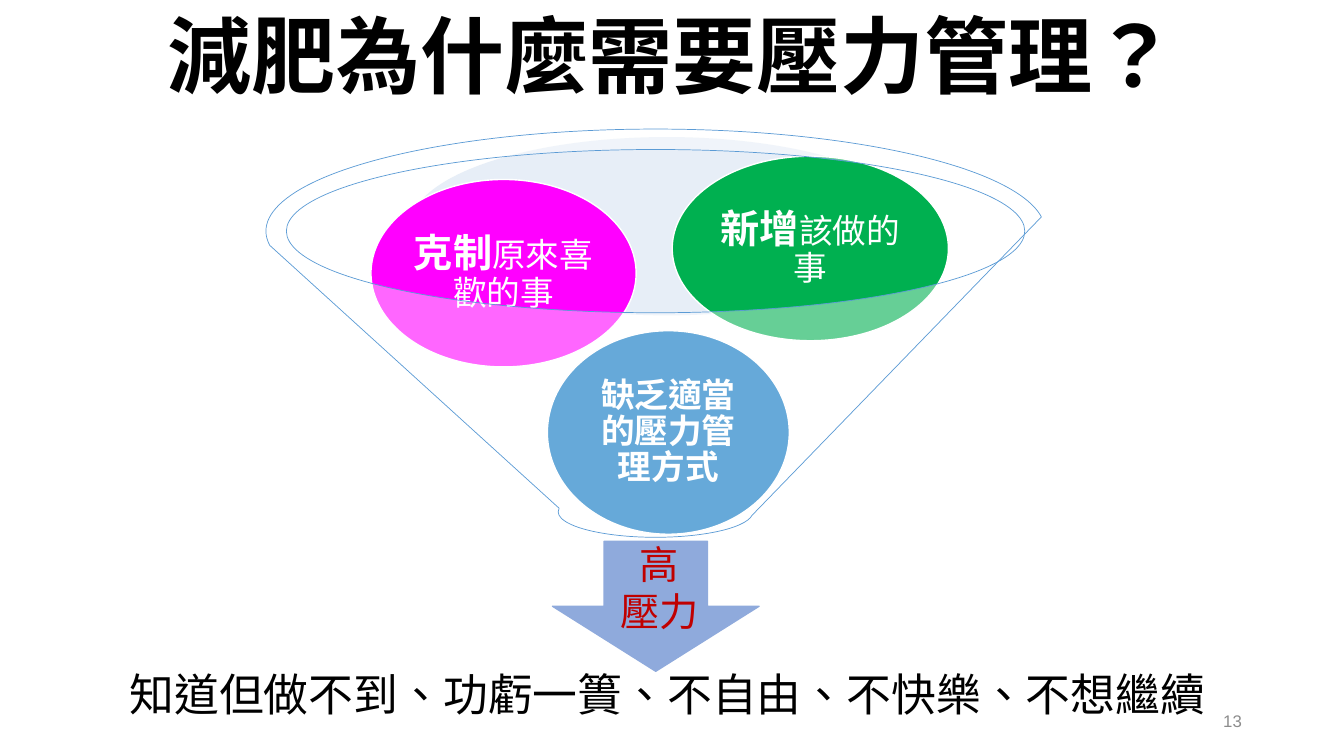
from lxml.etree import SubElement
from pptx import Presentation
from pptx.dml.color import RGBColor
from pptx.enum.lang import MSO_LANGUAGE_ID as Language
from pptx.enum.shapes import MSO_SHAPE as Shape
from pptx.enum.text import MSO_ANCHOR as Anchor, MSO_AUTO_SIZE as AutoSize, PP_ALIGN as Align
from pptx.oxml.ns import qn
from pptx.util import Pt

FONT = "Arial"
COLORS = {
    "black": "000000",
    "white": "FFFFFF",
    "back": "C4D5EB",
    "arrow": "8FAADC",
    "stress": "0070C0",
    "restrain": "FF00FF",
    "add": "00B050",
    "funnel_line": "5B9BD5",
    "pressure": "C00000",
    "number": "8C8C8C",
}


def color(name):
    return RGBColor.from_string(COLORS[name])


def points(box):
    return [Pt(length) for length in box]


def write(frame, paragraphs, color_name, align=Align.CENTER, anchor=Anchor.MIDDLE,
          inset=None, spacing=None):
    """Fill a frame; each paragraph is a list of (text, size, bold)."""
    frame.word_wrap = True
    frame.auto_size = AutoSize.NONE
    frame.vertical_anchor = anchor
    if inset is not None:
        frame.margin_left = frame.margin_right = Pt(inset)
        frame.margin_top = frame.margin_bottom = Pt(inset)
    for index, parts in enumerate(paragraphs):
        paragraph = frame.add_paragraph() if index else frame.paragraphs[0]
        paragraph.alignment = align
        paragraph.line_spacing = spacing
        for text, size, bold in parts:
            run = paragraph.add_run()
            run.text = text
            font = run.font
            font.name, font.size, font.bold = FONT, Pt(size), bold
            font.color.rgb = color(color_name)
            font.language_id = Language.TRADITIONAL_CHINESE
            SubElement(run._r.get_or_add_rPr(), qn("a:ea"), typeface=FONT)


def add_figure(slide, kind, box, fill, line=None, width=1, opacity=None):
    figure = slide.shapes.add_shape(kind, *points(box))
    figure.shadow.inherit = False
    figure.fill.solid()
    figure.fill.fore_color.rgb = color(fill)
    if opacity:
        tint = figure.fill._xPr.find(qn("a:solidFill"))[0]
        SubElement(tint, qn("a:alpha"), val=str(opacity * 1000))
    if line:
        figure.line.color.rgb = color(line)
        figure.line.width = Pt(width)
    else:
        figure.line.fill.background()
    return figure


def add_cause(slide, box, fill, parts, inset):
    cause = add_figure(slide, Shape.OVAL, box, fill, "white")
    write(cause.text_frame, [parts], "white", inset=inset, spacing=0.9)


def add_label(slide, box, paragraphs, color_name, **layout):
    label = slide.shapes.add_textbox(*points(box))
    write(label.text_frame, paragraphs, color_name, **layout)


def main():
    deck = Presentation()
    deck.slide_width, deck.slide_height = Pt(960), Pt(540)
    slide = deck.slides.add_slide(deck.slide_layouts[5])

    # Title
    title = slide.shapes.title
    title.left, title.top, title.width, title.height = points((0, 0, 960, 85.7))
    write(title.text_frame, [[("減肥為什麼需要壓力管理？", 60, True)]], "black", spacing=0.9)

    # Funnel mouth, arrow and outcome
    add_figure(slide, Shape.OVAL, (293, 97.9, 366.5, 127.4), "back", opacity=40)
    add_figure(slide, Shape.DOWN_ARROW, (394.6, 386.6, 147.6, 92.9), "arrow", "arrow")
    add_label(slide, (65.5, 455, 823, 85),
              [[("知道但做不到、功虧一簣、不自由、不快樂、不想繼續", 32, False)]],
              "black", inset=18, spacing=0.9)

    # Causes inside the funnel
    add_cause(slide, (391, 236.2, 172.8, 145.4), "stress",
              [("缺乏適當的壓力管理方式", 24, True)], 2.4)
    add_cause(slide, (265, 128.2, 189.4, 133.9), "restrain",
              [("克制", 28, True), ("原來喜歡的事", 24, False)], 2.8)
    add_cause(slide, (480.2, 111.6, 197.3, 131.8), "add",
              [("新增", 28, True), ("該做的事", 24, False)], 2.8)
    add_figure(slide, Shape.FUNNEL, (190, 92.2, 556.6, 291.6), "white",
               "funnel_line", width=0.5, opacity=40)

    # Result on the arrow
    add_label(slide, (414.7, 382.3, 112.3, 74.9),
              [[("高", 28, False)], [("壓力", 28, False)]], "pressure", anchor=Anchor.TOP)

    # Slide number
    add_label(slide, (678.2, 500.4, 216, 28.8), [[("13", 12, False)]], "number",
              align=Align.RIGHT)

    deck.save("out.pptx")


if __name__ == "__main__":
    main()
